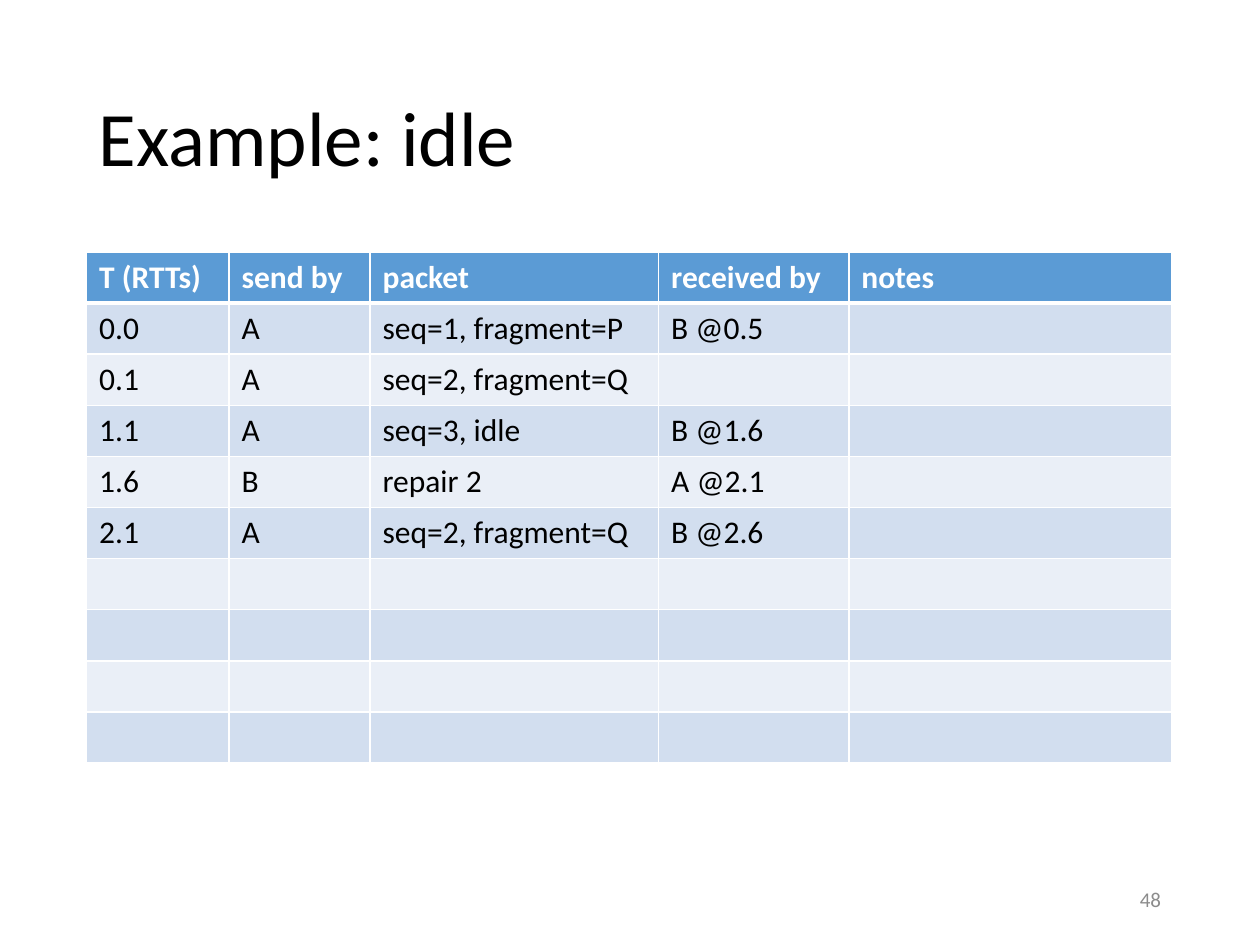
from dataclasses import dataclass

from lxml.etree import SubElement
from pptx import Presentation
from pptx.dml.color import RGBColor
from pptx.enum.text import MSO_ANCHOR as Anchor, PP_ALIGN as Align
from pptx.oxml.ns import qn
from pptx.slide import Slide
from pptx.util import Pt

COLORS = {
    "text": "000000",
    "number": "8C8C8C",
    "header": "5B9BD5",
    "odd": "D2DEEF",
    "even": "EAEFF7",
    "white": "FFFFFF",
}
COLUMN_WIDTHS = [81.4, 80.6, 164.9, 108.7, 184.6]
ROW_COUNT = 10
ROW_HEIGHT = 29.2
PACKETS = [
    ["T (RTTs)", "send by", "packet", "received by", "notes"],
    ["0.0", "A", "seq=1, fragment=P", "B @0.5"],
    ["0.1", "A", "seq=2, fragment=Q"],
    ["1.1", "A", "seq=3, idle", "B @1.6"],
    ["1.6", "B", "repair 2", "A @2.1"],
    ["2.1", "A", "seq=2, fragment=Q", "B @2.6"],
]


@dataclass
class PageBuilder:
    page: Slide
    font: str = "Calibri"
    body_size: float = 18

    def color(self, name):
        return RGBColor.from_string(COLORS[name])

    def format_text(self, para, size, color, bold=False):
        for span in para.runs:
            span.font.name = self.font
            span.font.size = Pt(size)
            span.font.bold = bold
            span.font.color.rgb = self.color(color)

    def text(self, content, left, top, width, height, size, color, align=Align.LEFT):
        box = self.page.shapes.add_textbox(Pt(left), Pt(top), Pt(width), Pt(height))
        frame = box.text_frame
        frame.word_wrap = True
        frame.vertical_anchor = Anchor.MIDDLE
        frame.text = content
        para = frame.paragraphs[0]
        para.alignment = align
        para.line_spacing = 0.9
        self.format_text(para, size, color)

    def borders(self, cell, top, bottom):
        properties = cell._tc.get_or_add_tcPr()
        for side, width in (("L", 1), ("R", 1), ("T", top), ("B", bottom)):
            line = SubElement(properties, qn(f"a:ln{side}"), w=str(Pt(width)))
            fill = SubElement(line, qn("a:solidFill"))
            SubElement(fill, qn("a:srgbClr"), val=COLORS["white"])

    def table(self, rows, row_count, widths, row_height, left, top):
        frame = self.page.shapes.add_table(
            row_count, len(widths), Pt(left), Pt(top),
            Pt(sum(widths)), Pt(row_height * row_count),
        )
        grid = frame.table
        for column, width in zip(grid.columns, widths):
            column.width = Pt(width)
        for index, row in enumerate(grid.rows):
            row.height = Pt(row_height)
            is_header = index == 0
            band = "header" if is_header else "odd" if index % 2 else "even"
            for cell in row.cells:
                self.borders(cell, 3 if index == 1 else 1, 3 if is_header else 1)
                cell.fill.solid()
                cell.fill.fore_color.rgb = self.color(band)
            values = rows[index] if index < len(rows) else []
            for cell, value in zip(row.cells, values):
                cell.text_frame.text = value
                self.format_text(
                    cell.text_frame.paragraphs[0], self.body_size,
                    "white" if is_header else "text", is_header,
                )


def main():
    deck = Presentation()
    deck.slide_width, deck.slide_height = Pt(720), Pt(540)
    builder = PageBuilder(deck.slides.add_slide(deck.slide_layouts[6]))
    builder.text("Example: idle", 49.5, 28.8, 621, 104.4, 44, "text")
    builder.table(PACKETS, ROW_COUNT, COLUMN_WIDTHS, ROW_HEIGHT, 49.5, 144)
    builder.text("48", 508.5, 500.5, 162, 28.8, 12, "number", Align.RIGHT)
    deck.save("out.pptx")


if __name__ == "__main__":
    main()
